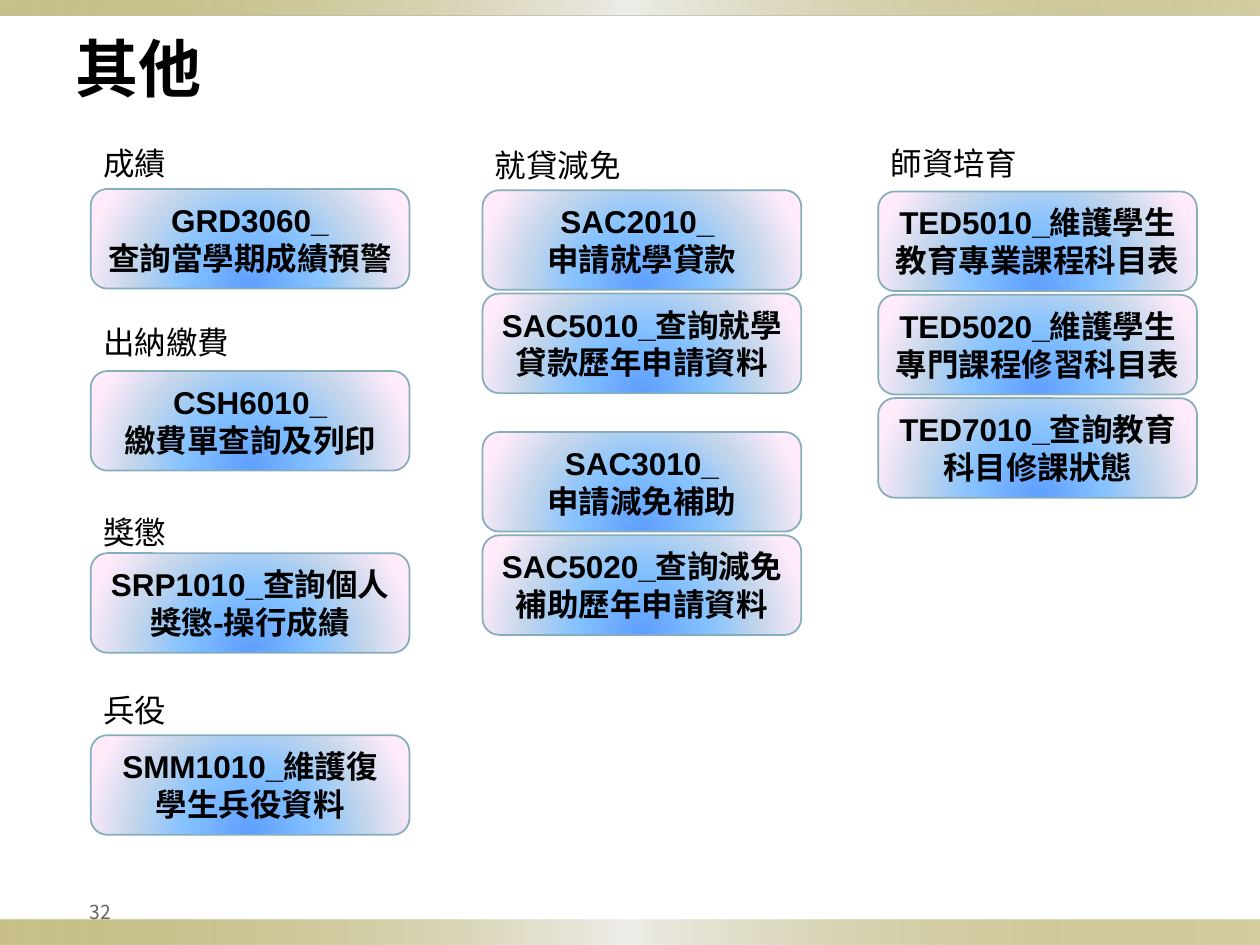
from dataclasses import dataclass

from lxml.etree import SubElement
from pptx import Presentation
from pptx.dml.color import RGBColor
from pptx.enum.shapes import MSO_SHAPE as Shape
from pptx.enum.text import MSO_ANCHOR as Anchor, MSO_AUTO_SIZE as AutoSize, PP_ALIGN as Align
from pptx.oxml.ns import qn
from pptx.util import Inches, Pt

WIDTH, HEIGHT = 10, 7.5
CARD_W, CARD_H = 2.53, 0.79
LABEL_H = 0.4
CJK = "Noto Sans CJK SC"

# Gradient stops: position, colour, opacity (all but colour in percent)
BAND_STOPS = [(0, "918415", 50), (50, "EEEDE8", 100), (100, "918415", 40)]
CARD_STOPS = [(0, "5E9EFF", 100), (40, "85C2FF", 100),
              (70, "C4D6EB", 100), (100, "FFEBFA", 100)]


@dataclass
class Column:
    left: float
    top: float
    pitch: float  # height of one grid row


@dataclass
class Group:
    column: Column
    row: float
    cards: list[str]
    label: str = ""
    lift: float = 0.4  # label top above first card


LEFT = Column(0.72, 1.5, 1.445)
MIDDLE = Column(3.83, 1.51, 0.82)
RIGHT = Column(6.97, 1.52, 0.82)

GROUPS = [
    Group(LEFT, 0, ["GRD3060_\n查詢當學期成績預警"], "成績", 0.41),
    Group(LEFT, 1, ["CSH6010_\n繳費單查詢及列印"], "出納繳費", 0.43),
    Group(LEFT, 2, ["SRP1010_查詢個人獎懲-操行成績"], "獎懲", 0.37),
    Group(LEFT, 3, ["SMM1010_維護復學生兵役資料"], "兵役"),
    Group(MIDDLE, 0, ["SAC2010_ \n申請就學貸款",
                      "SAC5010_查詢就學貸款歷年申請資料"], "就貸減免"),
    Group(MIDDLE, 2.34, ["SAC3010_\n申請減免補助",
                         "SAC5020_查詢減免補助歷年申請資料"]),
    Group(RIGHT, 0, ["TED5010_維護學生教育專業課程科目表",
                     "TED5020_維護學生專門課程修習科目表",
                     "TED7010_查詢教育科目修課狀態"], "師資培育", 0.43),
]


def color(value: str) -> RGBColor:
    return RGBColor.from_string(value)


def write(tf, text: str, size: float, font: str = "Arial", hue: str = "000000",
          bold: bool = False, align=Align.LEFT) -> None:
    for i, line in enumerate(text.split("\n")):
        p = tf.add_paragraph() if i else tf.paragraphs[0]
        p.alignment = align
        r = p.add_run()
        r.text = line
        r.font.size = Pt(size)
        r.font.bold = bold
        r.font.color.rgb = color(hue)
        r.font.name = font
        SubElement(r.font._element, qn("a:ea"), typeface=CJK)


def set_gradient(sp, stops: list, radial: bool = False) -> None:
    sp.fill.gradient()
    grad = sp._element.spPr.find(qn("a:gradFill"))
    for child in list(grad):
        grad.remove(child)
    gs_list = SubElement(grad, qn("a:gsLst"))
    for position, hue, opacity in stops:
        gs = SubElement(gs_list, qn("a:gs"), pos=str(position * 1000))
        clr = SubElement(gs, qn("a:srgbClr"), val=hue)
        if opacity < 100:
            SubElement(clr, qn("a:alpha"), val=str(opacity * 1000))
    if radial:  # centred on the bottom edge
        focus = SubElement(grad, qn("a:path"), {"path": "circle"})
        SubElement(focus, qn("a:fillToRect"), l="50000", t="100000", r="50000", b="0")
    else:
        SubElement(grad, qn("a:lin"), ang="0", scaled="0")


def add_band(s, top: float, height: float) -> None:
    sp = s.shapes.add_shape(Shape.RECTANGLE, 0, Inches(top), Inches(WIDTH), Inches(height))
    sp.shadow.inherit = False
    set_gradient(sp, BAND_STOPS)
    sp.line.fill.background()


def add_card(s, left: float, top: float, text: str) -> None:
    sp = s.shapes.add_shape(Shape.ROUNDED_RECTANGLE, Inches(left), Inches(top),
                            Inches(CARD_W), Inches(CARD_H))
    sp.shadow.inherit = False
    set_gradient(sp, CARD_STOPS, radial=True)
    sp.line.color.rgb = color("85ADBC")
    sp.line.width = Pt(1)
    tf = sp.text_frame
    tf.word_wrap = True
    tf.vertical_anchor = Anchor.MIDDLE
    write(tf, text, 18, bold=True, align=Align.CENTER)


def add_label(s, left: float, top: float, text: str) -> None:
    width = 0.21 + 0.25 * len(text)
    tf = s.shapes.add_textbox(Inches(left), Inches(top), Inches(width),
                              Inches(LABEL_H)).text_frame
    tf.word_wrap = False
    tf.auto_size = AutoSize.SHAPE_TO_FIT_TEXT
    write(tf, text, 18)


def add_group(s, group: Group) -> None:
    col = group.column
    for i, text in enumerate(group.cards):
        add_card(s, col.left, col.top + (group.row + i) * col.pitch, text)
    if group.label:
        add_label(s, col.left, col.top + group.row * col.pitch - group.lift, group.label)


def add_page_number(s, number: str) -> None:
    tf = s.shapes.add_textbox(0, Inches(7.04), Inches(0.93), Inches(0.4)).text_frame
    tf.word_wrap = True
    tf.vertical_anchor = Anchor.MIDDLE
    tf.margin_left = tf.margin_right = tf.margin_top = tf.margin_bottom = Inches(0.05)
    write(tf, number, 11, CJK, "636363", align=Align.RIGHT)


def main() -> None:
    prs = Presentation()
    prs.slide_width, prs.slide_height = Inches(WIDTH), Inches(HEIGHT)
    s = prs.slides.add_slide(prs.slide_layouts[5])

    # Title
    title = s.shapes.title
    title.left, title.top = Inches(0.5), Inches(0.05)
    title.width, title.height = Inches(9), Inches(0.97)
    title.text_frame.vertical_anchor = Anchor.MIDDLE
    write(title.text_frame, "其他", 36, CJK, bold=True)

    # Bands and page number
    add_band(s, 7.3, 0.2)
    add_band(s, 0, 0.12)
    add_page_number(s, "32")

    # Labelled groups of cards
    for group in GROUPS:
        add_group(s, group)

    prs.save("out.pptx")


if __name__ == "__main__":
    main()
